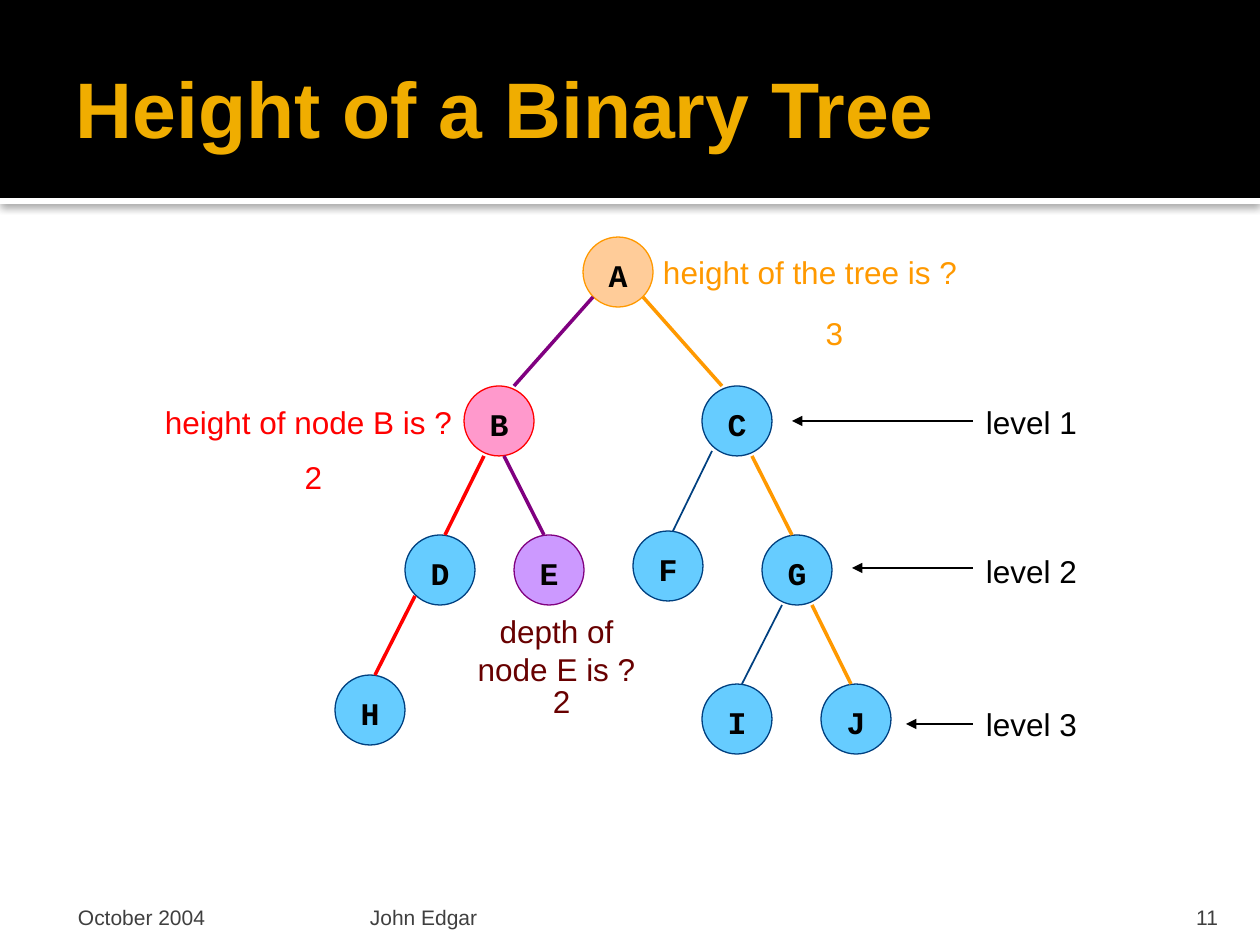
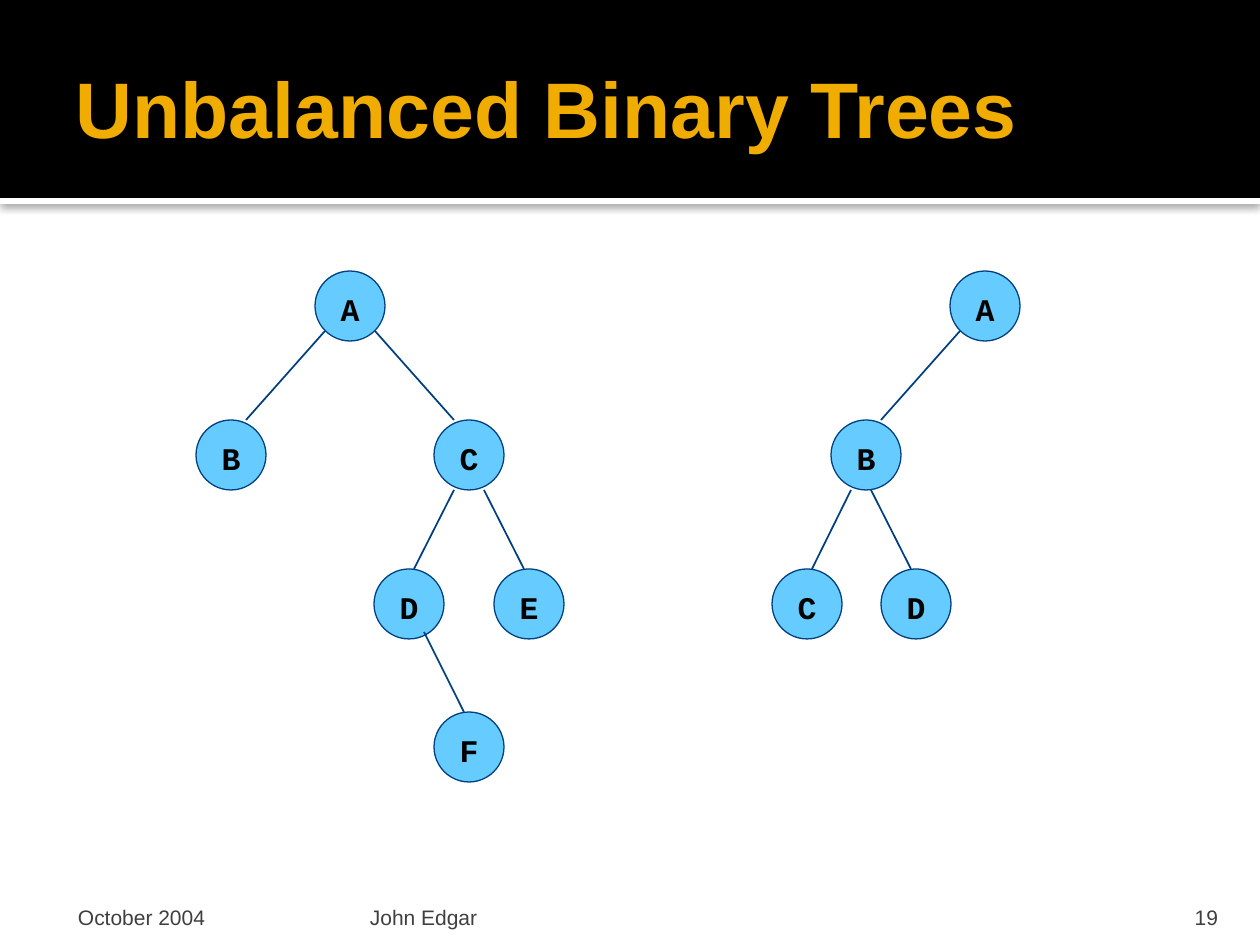
from lxml.etree import SubElement
from pptx import Presentation
from pptx.dml.color import RGBColor
from pptx.enum.shapes import MSO_CONNECTOR, MSO_SHAPE
from pptx.enum.text import MSO_ANCHOR, PP_ALIGN
from pptx.oxml import parse_xml
from pptx.oxml.ns import nsdecls, qn
from pptx.util import Emu, Pt

WIDTH, HEIGHT = 1260, 945
EMU_PER_PX = 914400 / 126
NODE_SIZE = 70
TITLE_ONLY = 5
SANS, MONO = "Arial", "Courier New"
BLACK, WHITE, GOLD, GREY = "000000", "FFFFFF", "F0AD00", "3F3F3F"
NAVY, SKY = "004080", "66CCFF"
ORANGE, PEACH = "FF9900", "FFCC99"
RED, PINK = "FF0000", "FF99CC"
PURPLE, LILAC = "800080", "CC99FF"
MAROON = "680000"
LEFT, CENTER, RIGHT = PP_ALIGN.LEFT, PP_ALIGN.CENTER, PP_ALIGN.RIGHT

HEIGHT_NODES = {
    "A": (0, 0), "B": (-119, 149), "C": (119, 149), "D": (-178, 298), "E": (-69, 298),
    "F": (50, 294), "G": (179, 298), "H": (-248, 438), "I": (119, 447), "J": (238, 447),
}
HEIGHT_EDGES = {
    "AB": (PURPLE, 2), "AC": (ORANGE, 2), "BD": (RED, 2), "BE": (PURPLE, 2), "CF": (NAVY, 1),
    "CG": (ORANGE, 2), "DH": (RED, 2), "GI": (NAVY, 1), "GJ": (ORANGE, 2),
}
HEIGHT_STARTS = {"BE": (5, 35), "CF": (25, 30), "DH": (25, 26)}
HEIGHT_STYLES = {"A": (PEACH, ORANGE), "B": (PINK, RED), "E": (LILAC, PURPLE)}
HEIGHT_LABELS = [
    ("height of node B is ?", 142, 397, 323, RED, RIGHT),
    ("2", 152, 452, 323, RED, CENTER),
    ("height of the tree is ?", 650, 247, 323, ORANGE, LEFT),
    ("3", 673, 308, 323, ORANGE, CENTER),
    ("depth of node E is ?", 460, 606, 193, MAROON, CENTER),
    ("2", 465, 676, 193, MAROON, CENTER),
]
LEVELS = [(397, 421, 792), (546, 568, 852), (699, 724, 906)]

LEFT_NODES = {
    "A": (0, 0), "B": (-119, 149), "C": (119, 149),
    "D": (59, 298), "E": (179, 298), "F": (119, 441),
}
RIGHT_NODES = {"A": (0, 0), "B": (-119, 149), "C": (-178, 298), "D": (-69, 298)}


def px(length):
    """Turn pixels into EMU."""
    return Emu(round(length * EMU_PER_PX))


def color(value):
    """Turn a hex string into a colour."""
    return RGBColor.from_string(value)


def write(shape, text, size, font_name, fill, bold=False, align=LEFT,
          anchor=MSO_ANCHOR.TOP, insets=(13, 6, 13, 6)):
    """Write one formatted run into a shape."""
    frame = shape.text_frame
    frame.word_wrap = True
    frame.vertical_anchor = anchor
    frame.margin_left, frame.margin_top, frame.margin_right, frame.margin_bottom = map(px, insets)
    paragraph = frame.paragraphs[0]
    paragraph.alignment = align
    run = paragraph.add_run()
    run.text = text
    run.font.name, run.font.size, run.font.bold = font_name, Pt(size), bold
    run.font.color.rgb = color(fill)


def add_text(slide, box, *arguments, **options):
    """Add a text box with one run."""
    write(slide.shapes.add_textbox(*map(px, box)), *arguments, **options)


def add_filled(slide, kind, box, fill, outline=None):
    """Add a preset shape without a shadow."""
    shape = slide.shapes.add_shape(kind, *map(px, box))
    shape.shadow.inherit = False
    shape.fill.solid()
    shape.fill.fore_color.rgb = color(fill)
    if outline:
        shape.line.color.rgb = color(outline)
        shape.line.width = Pt(0.75)
    else:
        shape.line.fill.background()
    return shape


def add_line(slide, start, end, stroke, width, arrow=False):
    """Add a straight line, with an arrowhead at its end on request."""
    line = slide.shapes.add_connector(MSO_CONNECTOR.STRAIGHT, *map(px, (*start, *end)))
    line.line.color.rgb = color(stroke)
    line.line.width = Pt(width)
    if arrow:
        SubElement(line.line._get_or_add_ln(), qn("a:tailEnd"), type="triangle")
    SubElement(line._element.spPr, qn("a:effectLst"))


def add_header(slide, title_text):
    """Draw the title band with its shadowed edge and the title."""
    edge = add_filled(slide, MSO_SHAPE.RECTANGLE, (0, 198, WIDTH, 6), WHITE)
    effects = edge._element.spPr.find(qn("a:effectLst"))
    effects.append(parse_xml(
        f'<a:outerShdw {nsdecls("a")} blurRad="63500" dist="10000" dir="5400000" rotWithShape="0">'
        f'<a:srgbClr val="{BLACK}"><a:alpha val="60000"/></a:srgbClr></a:outerShdw>'))
    add_filled(slide, MSO_SHAPE.RECTANGLE, (0, 0, WIDTH, 198), BLACK)
    title = slide.shapes.title
    slide.shapes._spTree.append(title._element)
    title.left, title.top, title.width, title.height = map(px, (63, 21, 1134, 173))
    write(title, title_text, 45, SANS, GOLD, bold=True,
          anchor=MSO_ANCHOR.MIDDLE, insets=(13, 6, 6, 6))


def add_footer(slide, number):
    """Write the date, the author and the slide number."""
    for text, left, width, inset, align in [
        ("October 2004", 63, 294, 15, LEFT),
        ("John Edgar", 364, 759, 6, LEFT),
        (str(number), 1130, 101, 13, RIGHT),
    ]:
        add_text(slide, (left, 892, width, 38), text, 12, SANS, GREY, align=align,
                 anchor=MSO_ANCHOR.BOTTOM, insets=(inset, 6, inset, 0))


def add_slide(presentation, title_text, number):
    """Add a slide with the shared header and footer."""
    slide = presentation.slides.add_slide(presentation.slide_layouts[TITLE_ONLY])
    add_header(slide, title_text)
    add_footer(slide, number)
    return slide


def add_tree(slide, root, nodes, edges, starts, styles=None):
    """Draw a tree whose nodes are placed relative to the root's centre."""
    centers = {name: (root[0] + x, root[1] + y) for name, (x, y) in nodes.items()}
    radius = NODE_SIZE / 2
    for name, (x, y) in centers.items():
        fill, outline = (styles or {}).get(name, (SKY, NAVY))
        node = add_filled(slide, MSO_SHAPE.OVAL,
                          (x - radius, y - radius, NODE_SIZE, NODE_SIZE), fill, outline)
        write(node, name, 18, MONO, BLACK, bold=True, align=CENTER,
              anchor=MSO_ANCHOR.MIDDLE, insets=(0, 5, 0, 0))
    for edge, (stroke, width) in edges.items():
        (parent_x, parent_y), (child_x, child_y) = (centers[name] for name in edge)
        side = 1 if child_x > parent_x else -1
        wide = abs(child_x - parent_x) > 100
        start_x, start_y = starts.get(edge, (25, 25) if wide else (15, 35))
        add_line(slide, (parent_x + side * start_x, parent_y + start_y),
                 (child_x - side * (15 if wide else 5), child_y - radius), stroke, width)


def add_levels(slide, left):
    """Label the levels, each with an arrow to its row of nodes."""
    for level, (top, arrow_y, arrow_end) in enumerate(LEVELS, 1):
        add_text(slide, (left, top, 117, 50), f"level {level}", 18, SANS, BLACK)
        add_line(slide, (left, arrow_y), (arrow_end, arrow_y), BLACK, 0.75, arrow=True)


def add_height_slide(presentation):
    """Build the slide about heights, depths and levels."""
    slide = add_slide(presentation, "Height of a Binary Tree", 11)
    add_tree(slide, (618, 272), HEIGHT_NODES, HEIGHT_EDGES, HEIGHT_STARTS, HEIGHT_STYLES)
    for text, left, top, width, fill, align in HEIGHT_LABELS:
        height = 88 if text.startswith("depth") else 50
        add_text(slide, (left, top, width, height), text, 18, SANS, fill, align=align)
    add_levels(slide, 973)


def add_unbalanced_slide(presentation):
    """Build the slide with two unbalanced trees."""
    slide = add_slide(presentation, "Unbalanced Binary Trees", 19)
    for root, nodes, edges, starts in [
        ((985, 306), RIGHT_NODES, ("AB", "BC", "BD"), {"BD": (5, 35)}),
        ((350, 306), LEFT_NODES, ("AB", "AC", "CD", "CE", "DF"), {"DF": (15, 28)}),
    ]:
        add_tree(slide, root, nodes, dict.fromkeys(edges, (NAVY, 1)), starts)


def main():
    """Build and save the presentation."""
    presentation = Presentation()
    presentation.slide_width, presentation.slide_height = px(WIDTH), px(HEIGHT)
    add_height_slide(presentation)
    add_unbalanced_slide(presentation)
    presentation.save("out.pptx")


if __name__ == "__main__":
    main()
